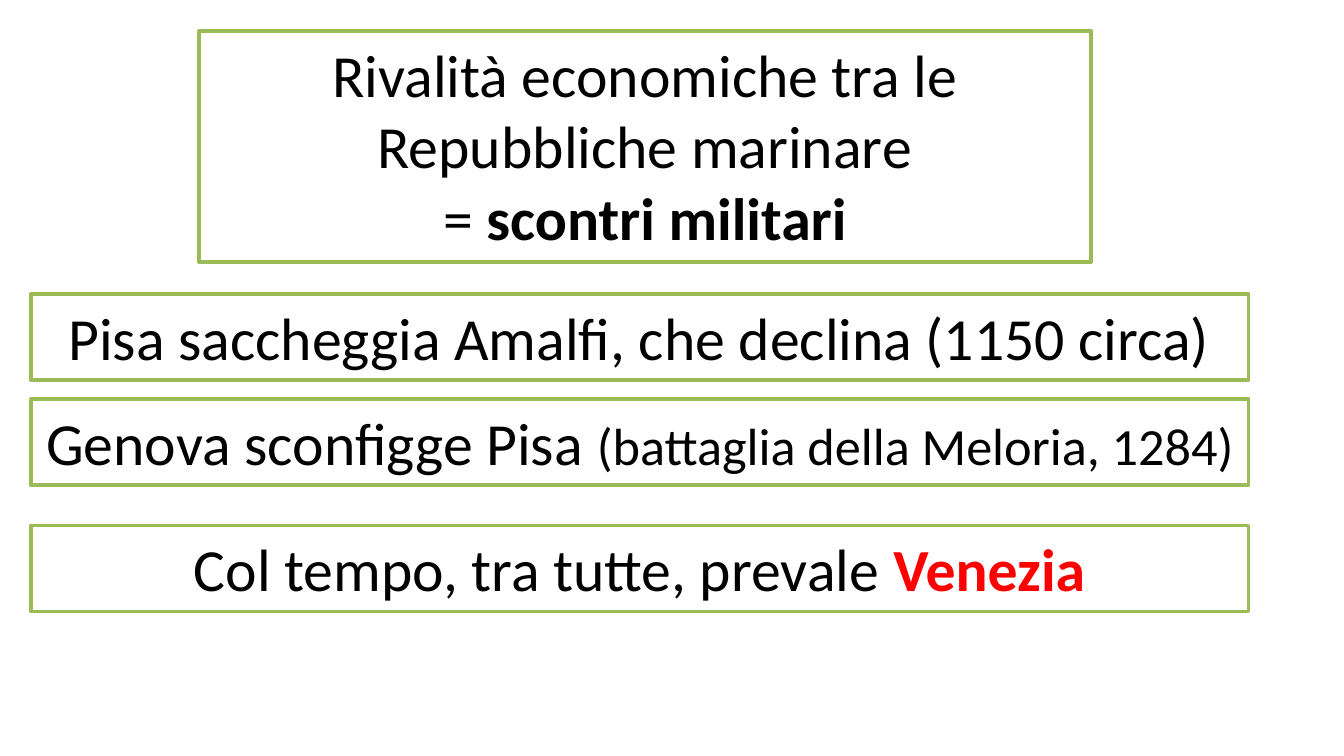
from pptx import Presentation
from pptx.dml.color import RGBColor
from pptx.enum.shapes import MSO_SHAPE
from pptx.enum.text import MSO_ANCHOR, MSO_AUTO_SIZE, PP_ALIGN
from pptx.util import Inches, Pt

BASE = {"name": "Calibri", "size": Pt(32), "bold": False}
BLACK, RED, GREEN, WHITE = "000000", "FF0000", "9BBB59", "FFFFFF"

TITLE_PLACE = (1.48, 0.23, 6.64, 1.72)
ROW_LEFT, ROW_WIDTH, ROW_HEIGHT = 0.23, 9.06, 0.64

TITLE = [
    [("Rivalità economiche tra le Repubbliche marinare", {}, BLACK)],
    [("= ", {}, BLACK), ("scontri militari", {"bold": True}, BLACK)],
]
ROWS = [
    (2.19, [("Pisa saccheggia Amalfi, che declina (1150 circa)", {}, BLACK)]),
    (2.97, [("Genova sconfigge Pisa ", {}, BLACK),
            ("(battaglia della Meloria, 1284)", {"size": Pt(28)}, BLACK)]),
    (3.91, [("Col tempo, tra tutte, prevale ", {}, BLACK),
            ("Venezia", {"bold": True}, RED)]),
]


def paint(color_format, value):
    color_format.rgb = RGBColor.from_string(value)


def add_box(page, place, paragraphs):
    box = page.shapes.add_shape(MSO_SHAPE.RECTANGLE, *map(Inches, place))
    box.shadow.inherit = False
    box.fill.solid()
    paint(box.fill.fore_color, WHITE)
    paint(box.line.color, GREEN)
    box.line.width = Pt(2)
    frame = box.text_frame
    frame.word_wrap = True
    frame.auto_size = MSO_AUTO_SIZE.SHAPE_TO_FIT_TEXT
    frame.vertical_anchor = MSO_ANCHOR.TOP
    for index, spans in enumerate(paragraphs):
        para = frame.add_paragraph() if index else frame.paragraphs[0]
        para.alignment = PP_ALIGN.CENTER
        for text, changes, color in spans:
            span = para.add_run()
            span.text = text
            for key, value in {**BASE, **changes}.items():
                setattr(span.font, key, value)
            paint(span.font.color, color)


deck = Presentation()
deck.slide_width = Inches(10)
deck.slide_height = deck.slide_width * 9 // 16
page = deck.slides.add_slide(deck.slide_layouts[6])
add_box(page, TITLE_PLACE, TITLE)
for top, spans in ROWS:
    add_box(page, (ROW_LEFT, top, ROW_WIDTH, ROW_HEIGHT), [spans])
deck.save("out.pptx")
